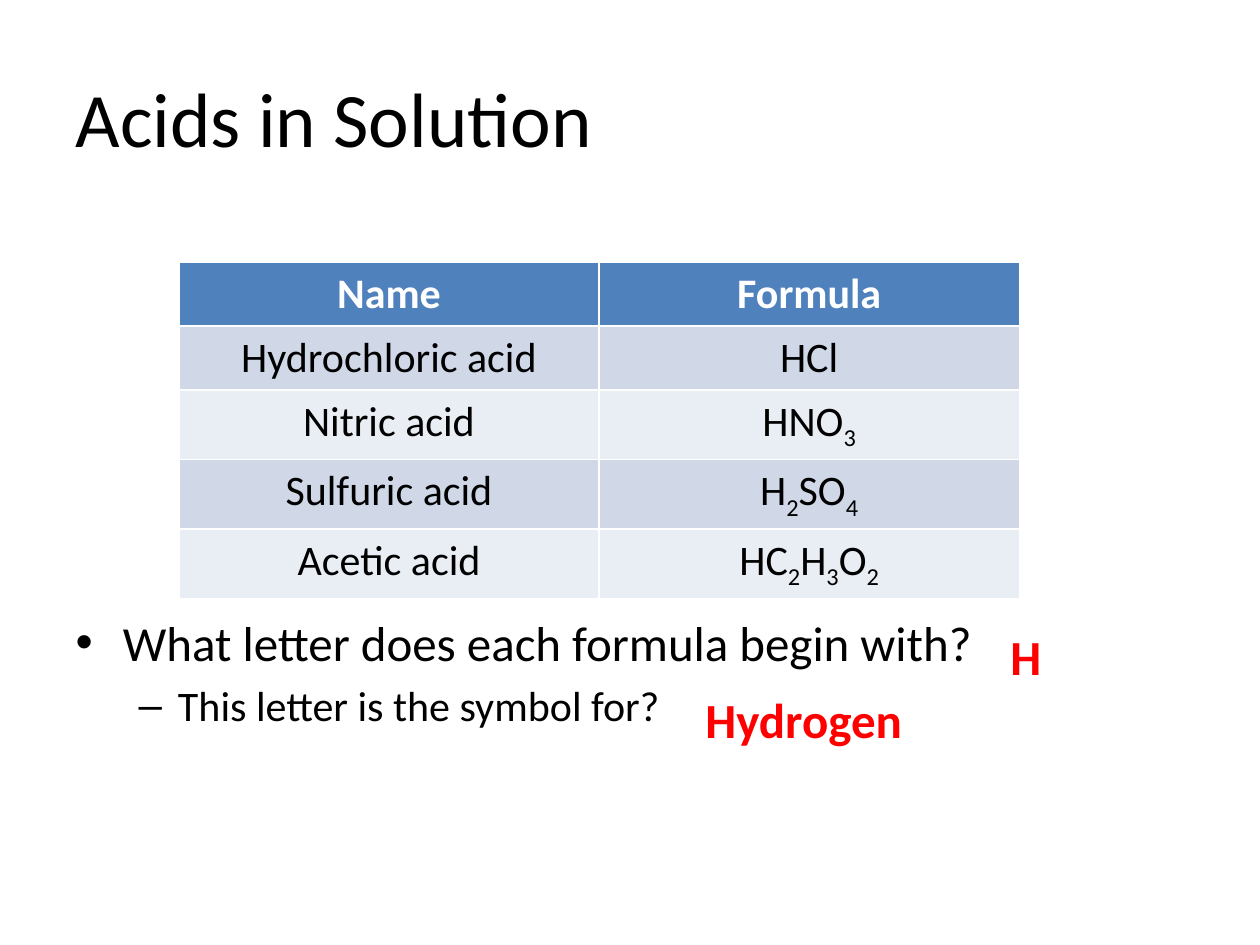
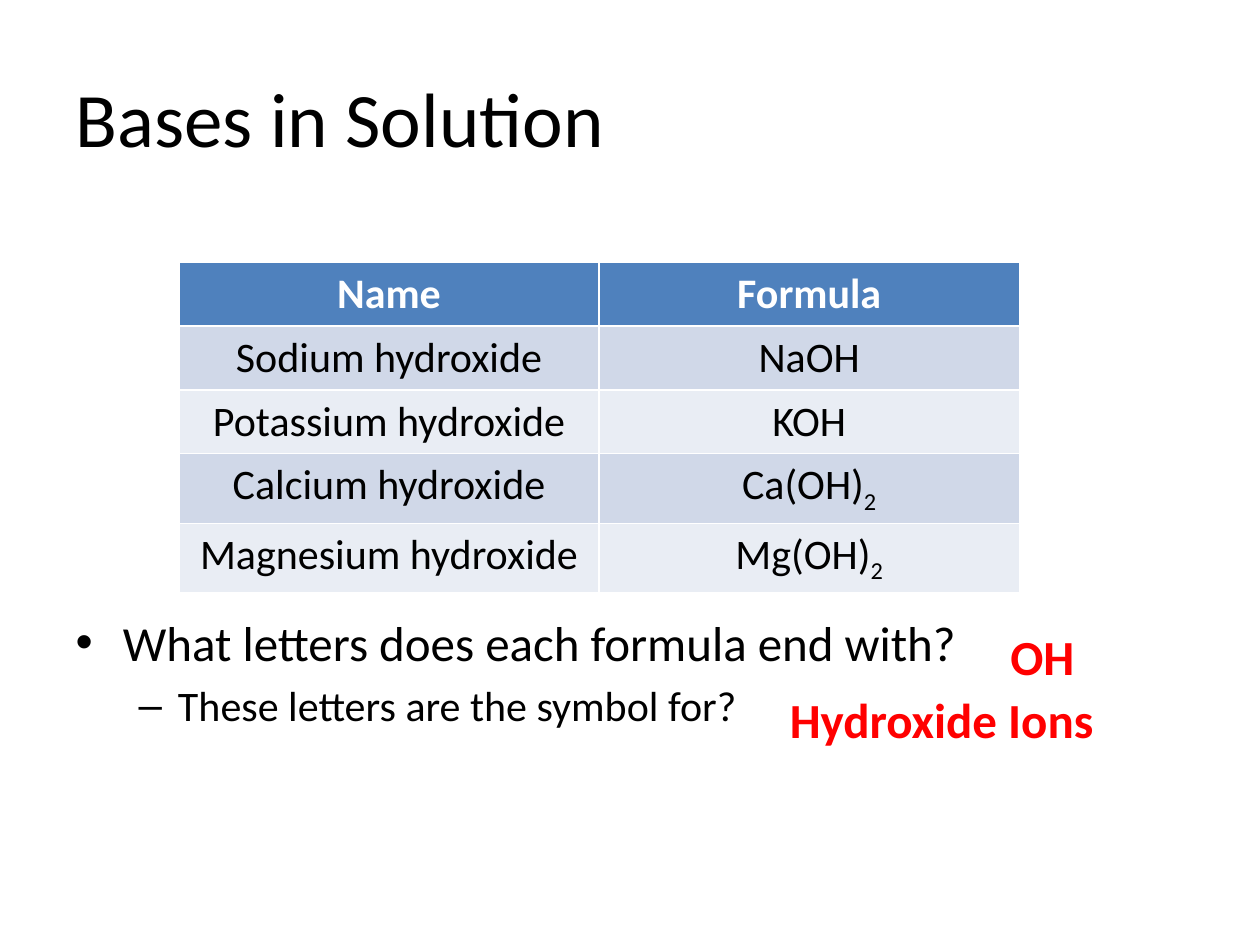
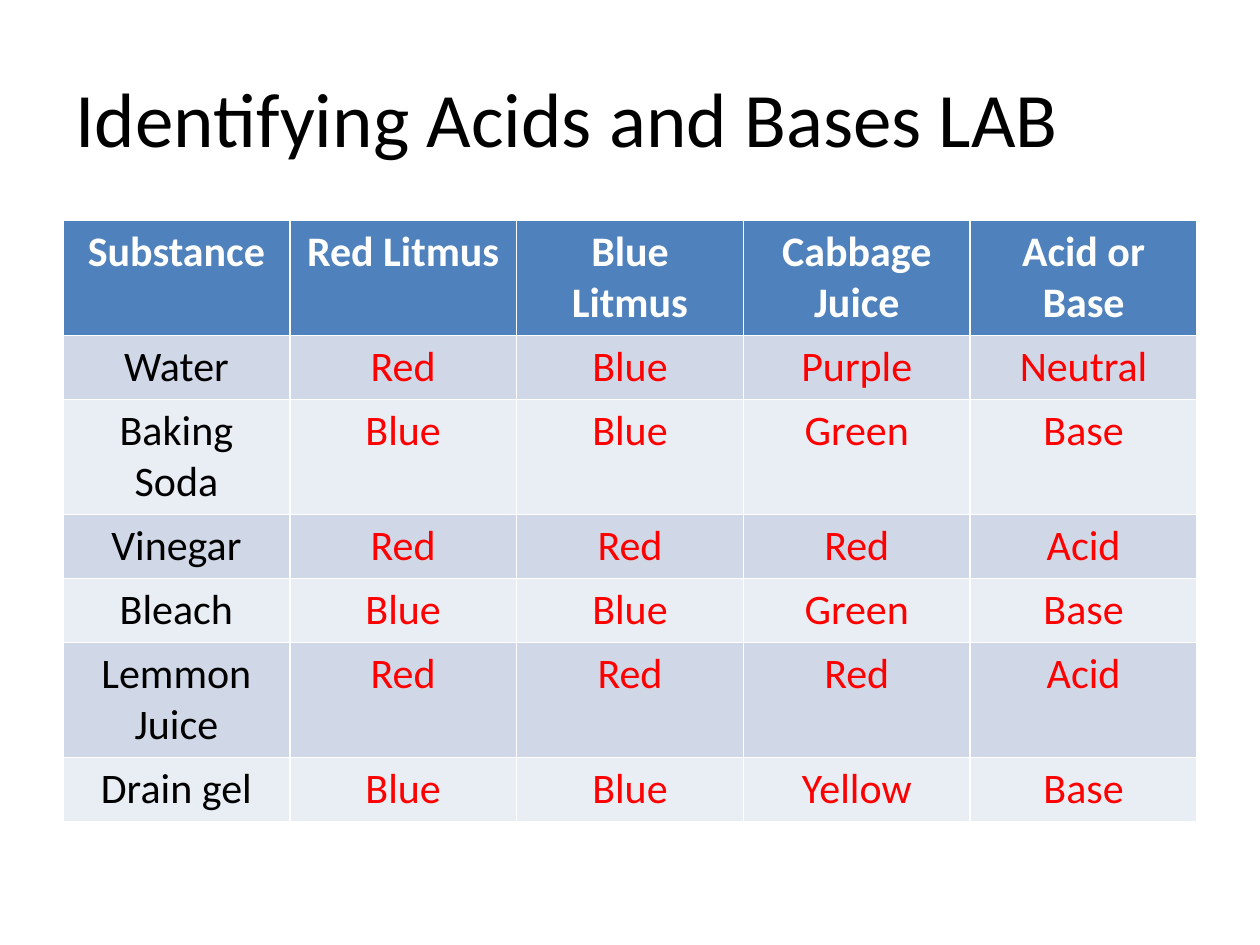
from dataclasses import dataclass
from itertools import groupby

from pptx import Presentation
from pptx.dml.color import RGBColor
from pptx.enum.text import MSO_ANCHOR, MSO_AUTO_SIZE, PP_ALIGN
from pptx.util import Inches, Pt


@dataclass(frozen=True)
class Theme:
    font: str = "Calibri"
    black: str = "000000"
    white: str = "FFFFFF"
    red: str = "FF0000"
    head: str = "4F81BD"
    bands: tuple = ("D0D8E8", "E9EDF4")
    title: int = 44
    lead: int = 28
    text: int = 24


theme = Theme()


def style(para, size, color, bold=False):
    for run in para.runs:
        run.font.name = theme.font
        run.font.size = Pt(size)
        run.font.bold = bold
        run.font.color.rgb = RGBColor.from_string(color)


def add_grid(slide, rows, left, top, width, answer):
    shape = slide.shapes.add_table(
        len(rows), len(rows[0]), Inches(left), Inches(top),
        Inches(width), Inches(0.5 * len(rows)))
    for i, row in enumerate(rows):
        for j, text in enumerate(row):
            cell = shape.table.cell(i, j)
            fill = theme.bands[(i - 1) % 2] if i else theme.head
            cell.fill.solid()
            cell.fill.fore_color.rgb = RGBColor.from_string(fill)
            para = cell.text_frame.paragraphs[0]
            para.alignment = PP_ALIGN.CENTER
            for digit, chars in groupby(text, str.isdigit):
                run = para.add_run()
                run.text = "".join(chars)
                if digit:
                    run._r.get_or_add_rPr().set("baseline", "-25000")
            color = theme.white if i == 0 else answer if j else theme.black
            style(para, theme.text, color, bold=i == 0)


topics = [
    ("Acids in Solution",
     [("Name", "Formula"),
      ("Hydrochloric acid", "HCl"),
      ("Nitric acid", "HNO3"),
      ("Sulfuric acid", "H2SO4"),
      ("Acetic acid", "HC2H3O2")],
     ("What letter does each formula begin with?",
      "This letter is the symbol for?"),
     [("H", 7.92, 4.92, 0.45), ("Hydrogen", 5.5, 5.42, 1.78)]),
    ("Bases in Solution",
     [("Name", "Formula"),
      ("Sodium hydroxide", "NaOH"),
      ("Potassium hydroxide", "KOH"),
      ("Calcium hydroxide", "Ca(OH)2"),
      ("Magnesium hydroxide", "Mg(OH)2")],
     ("What letters does each formula end with?",
      "These letters are the symbol for?"),
     [("OH", 7.92, 4.92, 0.71), ("Hydroxide Ions", 6.17, 5.42, 2.64)]),
]

tests = [
    ("Substance", "Red Litmus", "Blue Litmus", "Cabbage Juice", "Acid or Base"),
    ("Water", "Red", "Blue", "Purple", "Neutral"),
    ("Baking Soda", "Blue", "Blue", "Green", "Base"),
    ("Vinegar", "Red", "Red", "Red", "Acid"),
    ("Bleach", "Blue", "Blue", "Green", "Base"),
    ("Lemmon Juice", "Red", "Red", "Red", "Acid"),
    ("Drain gel", "Blue", "Blue", "Yellow", "Base"),
]

deck = Presentation()
deck.slide_width = Inches(10)
deck.slide_height = Inches(7.5)

for name, rows, asks, answers in topics:
    slide = deck.slides.add_slide(deck.slide_layouts[1])
    slide.shapes.title.text_frame.text = name

    body = slide.placeholders[1]
    body.left, body.top = Inches(0.5), Inches(1.5)
    body.width, body.height = Inches(9), Inches(5.2)
    frame = body.text_frame
    frame.auto_size = MSO_AUTO_SIZE.NONE
    frame.margin_top = Inches(3.36)
    frame.text = "\n".join(asks)
    for level, para in enumerate(frame.paragraphs):
        para.level = level
        para.space_before = Pt(5 * level)
        style(para, theme.text if level else theme.lead, theme.black)

    add_grid(slide, rows, 1.42, 2.08, 6.67, theme.black)

    for text, left, top, width in answers:
        box = slide.shapes.add_textbox(
            Inches(left), Inches(top), Inches(width), Inches(0.57))
        box.text_frame.word_wrap = False
        box.text_frame.auto_size = MSO_AUTO_SIZE.SHAPE_TO_FIT_TEXT
        box.text_frame.text = text
        style(box.text_frame.paragraphs[0], theme.lead, theme.red, bold=True)

slide = deck.slides.add_slide(deck.slide_layouts[5])
slide.shapes.title.text_frame.text = "Identifying Acids and Bases LAB"
add_grid(slide, tests, 0.5, 1.75, 9, theme.red)

for slide in deck.slides:
    title = slide.shapes.title
    title.left, title.top = Inches(0.5), Inches(0.3)
    title.width, title.height = Inches(9), Inches(1.25)
    title.text_frame.vertical_anchor = MSO_ANCHOR.MIDDLE
    para = title.text_frame.paragraphs[0]
    para.alignment = PP_ALIGN.LEFT
    style(para, theme.title, theme.black)

deck.save("out.pptx")
